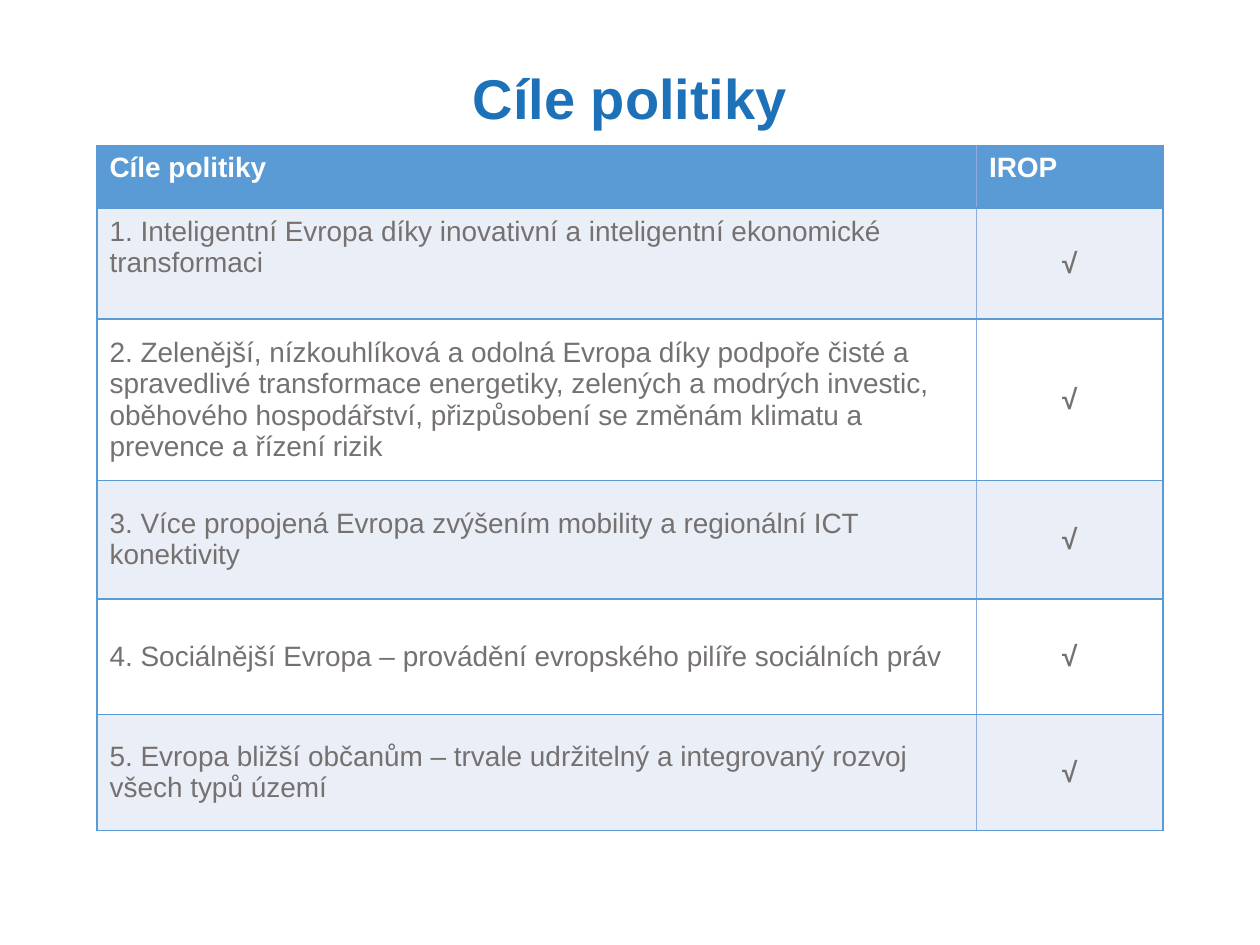
"""Build the slide listing the policy objectives covered by IROP."""
from dataclasses import dataclass

from lxml import etree
from pptx import Presentation
from pptx.dml.color import RGBColor
from pptx.enum.text import MSO_ANCHOR, PP_ALIGN
from pptx.oxml.ns import qn
from pptx.util import Inches, Pt

LEFT, CENTER = PP_ALIGN.LEFT, PP_ALIGN.CENTER
TOP, MIDDLE = MSO_ANCHOR.TOP, MSO_ANCHOR.MIDDLE
FONT = "Arial"
COLORS = {
    "title": "1D71B8",
    "header": "5B9BD5",
    "divider": "8FAADC",
    "band": "EAEFF7",
    "plain": "FFFFFF",
    "body": "767171",
}
COLUMN_WIDTHS = (6.98, 1.48)
HEADER_HEIGHT = 0.49
CHECK = "√"


@dataclass(frozen=True)
class Objective:
    text: str
    height: float
    bottom_margin: float = 0.05


@dataclass(frozen=True)
class CellStyle:
    fill: str
    ink: str
    bold: bool
    align: PP_ALIGN
    anchor: MSO_ANCHOR
    bottom_margin: float = 0.05


OBJECTIVES = (
    Objective("1. Inteligentní Evropa díky inovativní a inteligentní ekonomické transformaci", 0.87, 0.3),
    Objective(
        "2. Zelenější, nízkouhlíková a odolná Evropa díky podpoře čisté a spravedlivé "
        "transformace energetiky, zelených a modrých investic, oběhového hospodářství, "
        "přizpůsobení se změnám klimatu a prevence a řízení rizik", 1.28),
    Objective("3. Více propojená Evropa zvýšením mobility a regionální ICT konektivity", 0.94),
    Objective("4. Sociálnější Evropa – provádění evropského pilíře sociálních práv", 0.92),
    Objective("5. Evropa bližší občanům – trvale udržitelný a integrovaný rozvoj všech typů území", 0.92),
)


def style_paragraph(paragraph, size: float, ink: str, bold: bool, align: PP_ALIGN) -> None:
    paragraph.alignment = align
    font = paragraph.font
    font.name, font.size, font.bold = FONT, Pt(size), bold
    font.color.rgb = RGBColor.from_string(COLORS[ink])


def draw_borders(cell, column: int) -> None:
    divider_side = "R" if column == 0 else "L"
    properties = cell._tc.get_or_add_tcPr()
    for side in "LRTB":
        line = etree.SubElement(properties, qn(f"a:ln{side}"), w=str(Pt(1)))
        color = COLORS["divider" if side == divider_side else "header"]
        solid = etree.SubElement(line, qn("a:solidFill"))
        etree.SubElement(solid, qn("a:srgbClr"), val=color)


def fill_cell(cell, column: int, text: str, style: CellStyle) -> None:
    draw_borders(cell, column)
    cell.fill.solid()
    cell.fill.fore_color.rgb = RGBColor.from_string(COLORS[style.fill])
    cell.vertical_anchor = style.anchor
    cell.margin_bottom = Inches(style.bottom_margin)
    cell.text = text
    style_paragraph(cell.text_frame.paragraphs[0], 16, style.ink, style.bold, style.align)


def draw_title(slide, text: str) -> None:
    title = slide.shapes.add_textbox(Inches(0.69), Inches(0.39), Inches(8.62), Inches(0.76))
    frame = title.text_frame
    frame.word_wrap = True
    frame.vertical_anchor = MIDDLE
    frame.text = text
    style_paragraph(frame.paragraphs[0], 32, "title", True, CENTER)


def draw_objectives(slide) -> None:
    heights = (HEADER_HEIGHT, *(objective.height for objective in OBJECTIVES))
    table = slide.shapes.add_table(
        len(heights), len(COLUMN_WIDTHS), Inches(0.77), Inches(1.16),
        Inches(sum(COLUMN_WIDTHS)), Inches(sum(heights))).table
    for column, width in zip(table.columns, COLUMN_WIDTHS):
        column.width = Inches(width)
    for row, height in zip(table.rows, heights):
        row.height = Inches(height)

    header = CellStyle("header", "plain", True, LEFT, TOP)
    for column, heading in enumerate(("Cíle politiky", "IROP")):
        fill_cell(table.cell(0, column), column, heading, header)
    for row, objective in enumerate(OBJECTIVES, start=1):
        fill = "band" if row % 2 else "plain"
        goal = CellStyle(fill, "body", False, LEFT, MIDDLE, objective.bottom_margin)
        mark = CellStyle(fill, "body", True, CENTER, MIDDLE)
        fill_cell(table.cell(row, 0), 0, objective.text, goal)
        fill_cell(table.cell(row, 1), 1, CHECK, mark)


def main() -> None:
    deck = Presentation()
    deck.slide_width, deck.slide_height = Inches(10), Inches(7.5)
    slide = deck.slides.add_slide(deck.slide_layouts[6])
    draw_title(slide, "Cíle politiky")
    draw_objectives(slide)
    deck.save("out.pptx")


if __name__ == "__main__":
    main()
